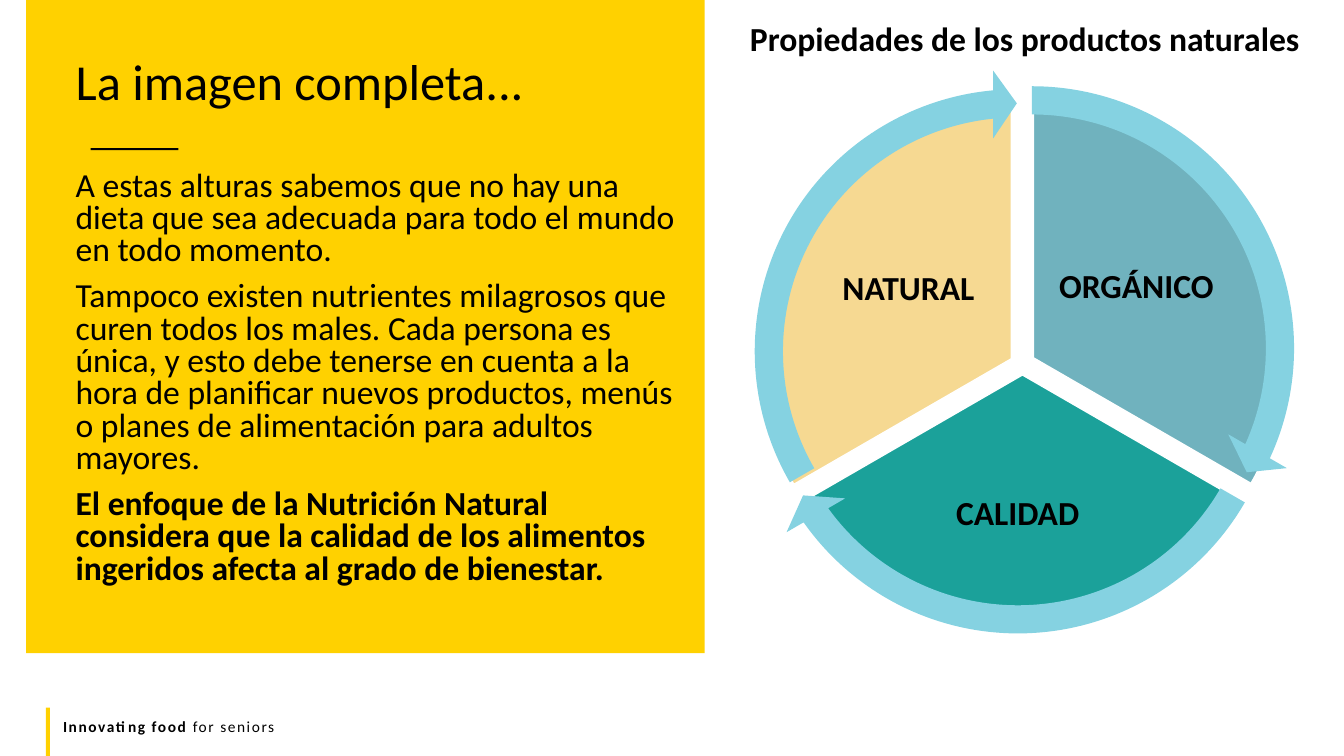
from dataclasses import dataclass
from lxml.etree import SubElement
from pptx import Presentation
from pptx.dml.color import RGBColor
from pptx.enum.shapes import MSO_SHAPE
from pptx.enum.text import MSO_ANCHOR, MSO_AUTO_SIZE, PP_ALIGN
from pptx.oxml.ns import qn
from pptx.util import Inches, Pt


@dataclass(frozen=True)
class Theme:
    """Colours, font and type sizes."""
    font: str = "Calibri"
    ink: str = "000000"
    paper: str = "FFFFFF"
    gold: str = "FFD100"
    blue: str = "70B2BE"
    teal: str = "1BA19A"
    sand: str = "F6D992"
    sky: str = "85D2E1"
    title: int = 36
    text: int = 24
    foot: int = 11


@dataclass(frozen=True)
class Box:
    """A rectangle in inches."""
    left: float
    top: float
    width: float
    height: float

    def inner(self, left, top, width, height):
        """Return an inner box given in percent of this one."""
        return Box(self.left + self.width * left / 100,
                   self.top + self.height * top / 100,
                   self.width * width / 100, self.height * height / 100)

    def edges(self):
        """Return the four lengths for a shape call."""
        return [Inches(v) for v in (self.left, self.top, self.width, self.height)]


THEME = Theme()
PAGE = Box(0, 0, 13.33, 7.5)


def draw(slide, kind, box, fill, line=None, turns=()):
    """Add a filled preset shape with its adjustments."""
    shape = slide.shapes.add_shape(kind, *box.edges())
    shape.shadow.inherit = False
    shape.fill.solid()
    shape.fill.fore_color.rgb = RGBColor.from_string(fill)
    if line:
        shape.line.color.rgb = RGBColor.from_string(line)
        shape.line.width = Pt(1)
    else:
        shape.line.fill.background()
    for spot, turn in enumerate(turns):
        shape.adjustments[spot] = turn


def write(shape, paras, size=THEME.text, bold=False, align=PP_ALIGN.LEFT,
          anchor=MSO_ANCHOR.TOP, inset=None, lead=1.0, gap=0, track=0):
    """Fill a shape with paragraphs of (words, bold) runs."""
    frame = shape.text_frame
    frame.word_wrap = True
    frame.auto_size = MSO_AUTO_SIZE.NONE
    frame.vertical_anchor = anchor
    if inset is not None:
        frame.margin_left = frame.margin_right = Inches(inset)
        frame.margin_top = frame.margin_bottom = Inches(inset)
    for spot, runs in enumerate(paras):
        para = frame.add_paragraph() if spot else frame.paragraphs[0]
        props = para._p.get_or_add_pPr()
        props.set("marL", "0")
        props.set("indent", "0")
        SubElement(props, qn("a:buNone"))
        para.alignment = align
        para.line_spacing = lead
        para.space_before = Pt(gap if spot else 0)
        para.space_after = Pt(0)
        for words, heavy in [(runs, bold)] if isinstance(runs, str) else runs:
            run = para.add_run()
            run.text = words
            run.font.name = THEME.font
            run.font.size = Pt(size)
            run.font.bold = heavy
            run.font.color.rgb = RGBColor.from_string(THEME.ink)
            if track:
                run._r.get_or_add_rPr().set("spc", str(track))


def label(slide, box, paras, **look):
    """Add a text box."""
    write(slide.shapes.add_textbox(*box.edges()), paras, **look)


def hold(slide, index, box, paras, **look):
    """Place a template placeholder in front and fill it."""
    shape = slide.placeholders[index]
    slide.shapes.element.append(shape.element)
    shape.left, shape.top, shape.width, shape.height = box.edges()
    write(shape, paras, **look)


def panel(slide, box):
    """Build the gold panel with title, rule and body."""
    draw(slide, MSO_SHAPE.RECTANGLE, box, THEME.gold)
    draw(slide, MSO_SHAPE.RECTANGLE, box.inner(9.51, 22.69, 12.93, 0.31), THEME.ink)
    hold(slide, 0, box.inner(5.79, 8.18, 82.62, 9.88), ["La imagen completa..."],
         size=THEME.title, anchor=MSO_ANCHOR.MIDDLE, lead=0.8)
    hold(slide, 1, box.inner(5.79, 25.46, 92.57, 69.44), [
        "A estas alturas sabemos que no hay una dieta que sea adecuada para todo "
        "el mundo en todo momento.",
        "Tampoco existen nutrientes milagrosos que curen todos los males. Cada "
        "persona es única, y esto debe tenerse en cuenta a la hora de planificar "
        "nuevos productos, menús o planes de alimentación para adultos mayores.",
        [("El enfoque de la Nutrición Natural considera que la calidad de los "
          "alimentos ingeridos afecta al grado de bienestar.", True)],
    ], lead=0.8, gap=10)


def wheel(slide, box):
    """Build the three-way wheel with its caption and arrows."""
    slices = [
        ("ORGÁNICO", THEME.blue, (7.87, 16.36), (51.76, 32.56, 29.82, 22.84), (2.51, 10.19)),
        ("CALIDAD", THEME.teal, (6.03, 18.98), (24.6, 68.83, 44.72, 20.06), (0.17, 13.73)),
        ("NATURAL", THEME.sand, (4.19, 16.51), (13.9, 32.87, 29.82, 22.84), (0, 10.65)),
    ]
    ends = [(162 + 72 * step) % 216 for step in range(4)]
    for step, (name, fill, pie, spot, _) in enumerate(slices):
        draw(slide, MSO_SHAPE.PIE, box.inner(*pie, 83.42, 76.85), fill,
             THEME.paper, ends[step:step + 2])
        label(slide, box.inner(*spot), [name], bold=True, align=PP_ALIGN.CENTER,
              anchor=MSO_ANCHOR.MIDDLE, inset=0.03, lead=0.9)
    tip = 3.28
    for step, (*_, ring) in enumerate(slices):
        draw(slide, MSO_SHAPE.CIRCULAR_ARROW, box.inner(*ring, 93.63, 86.27), THEME.sky,
             turns=(0.05, tip, ends[step + 1] - tip, ends[step], 0.06))
    label(slide, box.inner(0.84, 2.01, 98.99, 7.72),
          ["Propiedades de los productos naturales"], bold=True)


def footer(slide, box):
    """Build the gold tick and the footer line."""
    draw(slide, MSO_SHAPE.RECTANGLE, box.inner(0, 0, 0.33, 100), THEME.gold)
    label(slide, box.inner(0.6, 10, 99.4, 60),
          [[("Innovating food ", True), ("for seniors", False)]],
          size=THEME.foot, track=110)


def main():
    """Build and save the slide."""
    deck = Presentation()
    deck.slide_width, deck.slide_height = PAGE.edges()[2:]
    slide = deck.slides.add_slide(deck.slide_layouts[1])
    panel(slide, PAGE.inner(1.95, 0, 50.49, 86.4))
    wheel(slide, PAGE.inner(54.69, 0, 44.79, 86.4))
    footer(slide, PAGE.inner(3.41, 93.6, 90.6, 6.4))
    deck.save("out.pptx")


if __name__ == "__main__":
    main()
